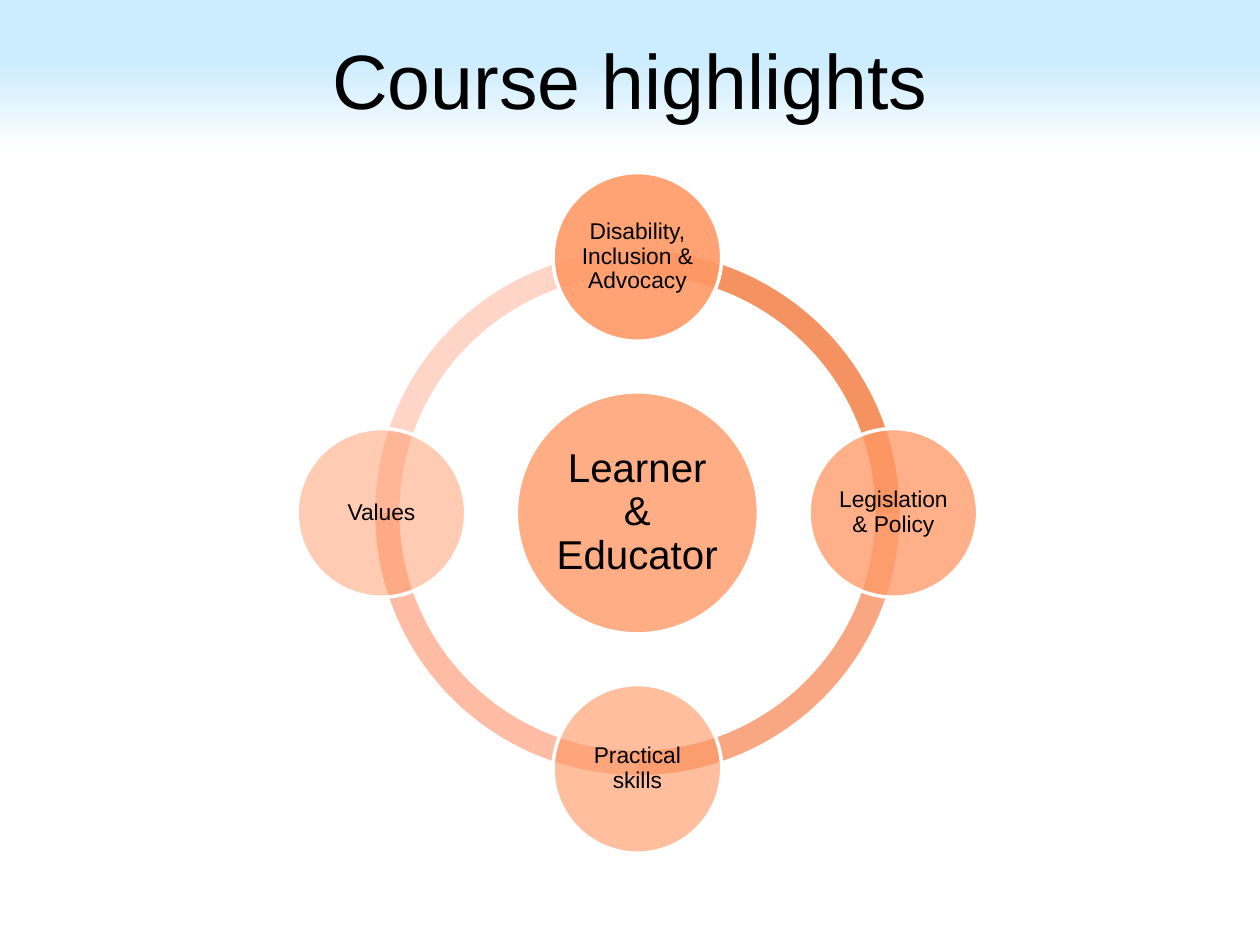
from math import cos, radians, sin

from lxml.etree import SubElement
from pptx import Presentation
from pptx.dml.color import RGBColor
from pptx.enum.shapes import MSO_SHAPE as Shape
from pptx.enum.text import MSO_ANCHOR as Anchor, PP_ALIGN as Align
from pptx.oxml.ns import qn
from pptx.util import Cm, Pt

BLACK = RGBColor(0x00, 0x00, 0x00)
WHITE = RGBColor(0xFF, 0xFF, 0xFF)
SKY = RGBColor(0xCC, 0xEC, 0xFF)
ORANGE = RGBColor(0xFF, 0x99, 0x66)

CENTER_X, CENTER_Y = 12.85, 10.34
ORBIT = 5.16
RING_SIZE, HUB_SIZE, TOPIC_SIZE = 10.57, 4.88, 3.4
RING_THICKNESS = 0.046

# Start angle and colour of each quarter, from back to front
QUARTERS = [
    (180, RGBColor(0xFF, 0xD5, 0xC7)),
    (90, RGBColor(0xFD, 0xBC, 0xA3)),
    (0, RGBColor(0xF9, 0xA6, 0x82)),
    (270, RGBColor(0xF4, 0x92, 0x61)),
]
# Text and opacity in percent, clockwise from the top
TOPICS = [
    ("Disability, Inclusion & Advocacy", 90),
    ("Legislation & Policy", 77),
    ("Practical skills", 63),
    ("Values", 50),
]


def add_centered(slide, kind, x, y, size):
    """Add a square-bounded shape around the point x, y, given in cm."""
    shape = slide.shapes.add_shape(
        kind, Cm(x - size / 2), Cm(y - size / 2), Cm(size), Cm(size))
    shape.shadow.inherit = False
    return shape


def add_header_band(slide, width):
    band = slide.shapes.add_shape(Shape.RECTANGLE, 0, 0, width, Cm(3.05))
    band.shadow.inherit = False
    band.line.fill.background()
    band.fill.gradient()
    band.fill.gradient_angle = 270
    stops = band.fill.gradient_stops
    for stop, position, color in zip(stops, (0.41, 1), (SKY, WHITE)):
        stop.position = position
        stop.color.rgb = color
    slide.shapes._spTree.insert(2, band._element)  # behind the title


def style_title(title, text):
    title.left, title.top, title.width, title.height = Cm(1.9), 0, Cm(21.6), Cm(3.18)
    frame = title.text_frame
    frame.text = text
    frame.vertical_anchor = Anchor.MIDDLE
    paragraph = frame.paragraphs[0]
    paragraph.alignment = Align.CENTER
    paragraph.font.name = "Arial"
    paragraph.font.size = Pt(44)
    paragraph.font.color.rgb = BLACK


def add_quarter(slide, start, color):
    arc = add_centered(slide, Shape.BLOCK_ARC, CENTER_X, CENTER_Y, RING_SIZE)
    # Adjustments count angles in units of 5/3 degree
    arc.adjustments[0] = start * 0.6
    arc.adjustments[1] = (start + 90) % 360 * 0.6
    arc.adjustments[2] = RING_THICKNESS
    arc.fill.solid()
    arc.fill.fore_color.rgb = color
    arc.line.fill.background()


def add_circle(slide, x, y, size, text, font_size, opacity, inset):
    circle = add_centered(slide, Shape.OVAL, x, y, size)
    circle.fill.solid()
    circle.fill.fore_color.rgb = ORANGE
    color = circle._element.spPr.find(qn("a:solidFill"))[0]
    SubElement(color, qn("a:alpha"), val=str(opacity * 1000))
    circle.line.color.rgb = WHITE
    circle.line.width = Pt(2)

    frame = circle.text_frame
    frame.text = text
    frame.word_wrap = True
    frame.vertical_anchor = Anchor.MIDDLE
    frame.margin_left = frame.margin_right = Cm(inset)
    frame.margin_top = frame.margin_bottom = Cm(inset)
    paragraph = frame.paragraphs[0]
    paragraph.alignment = Align.CENTER
    paragraph.line_spacing = 0.9
    paragraph.font.name = "Arial"
    paragraph.font.size = Pt(font_size)
    paragraph.font.color.rgb = BLACK


def main():
    presentation = Presentation()
    presentation.slide_width, presentation.slide_height = Cm(25.4), Cm(19.05)
    slide = presentation.slides.add_slide(presentation.slide_layouts[5])

    add_header_band(slide, presentation.slide_width)
    style_title(slide.shapes.title, "Course highlights")
    for start, color in QUARTERS:
        add_quarter(slide, start, color)
    add_circle(slide, CENTER_X, CENTER_Y, HUB_SIZE, "Learner & Educator", 23, 80, 0.07)
    for index, (text, opacity) in enumerate(TOPICS):
        angle = radians(360 / len(TOPICS) * index - 90)
        add_circle(slide, CENTER_X + ORBIT * cos(angle), CENTER_Y + ORBIT * sin(angle),
                   TOPIC_SIZE, text, 13, opacity, 0.05)

    presentation.save("out.pptx")


if __name__ == "__main__":
    main()
